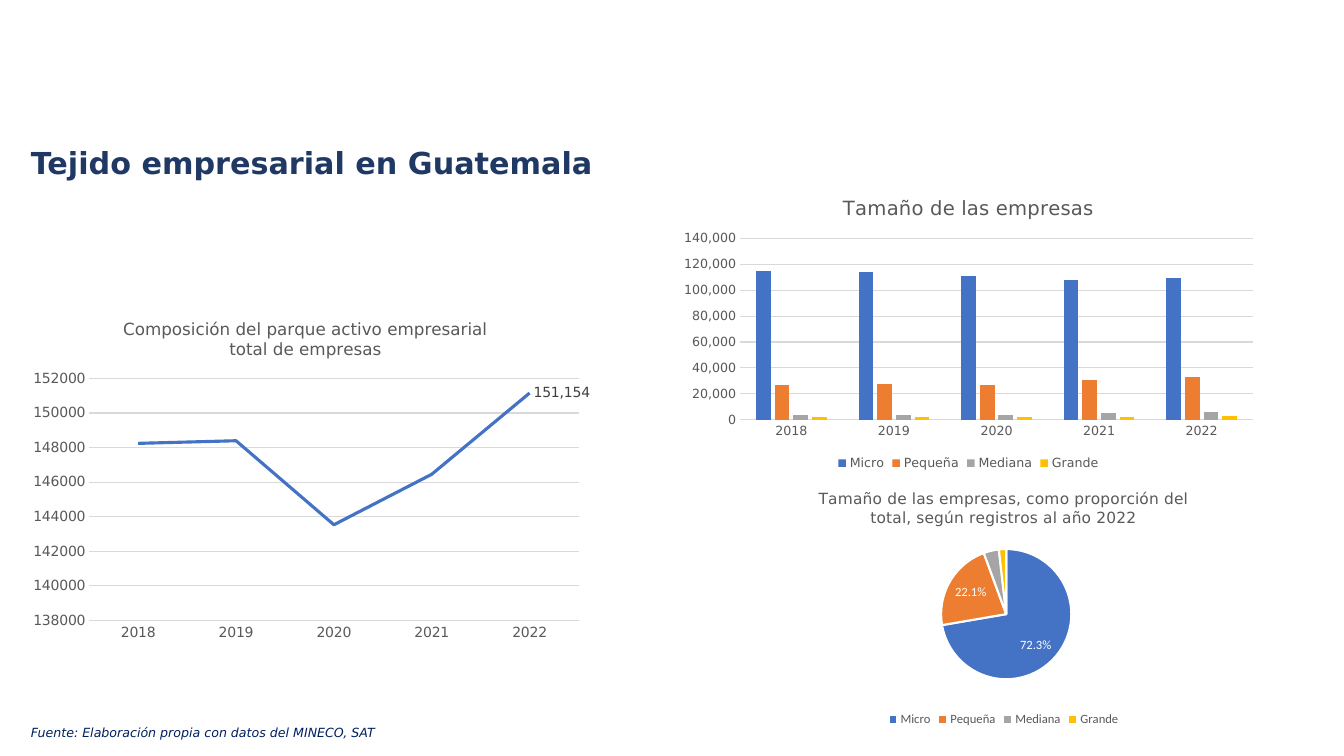
import pptx
import pptx.chart.data
import pptx.dml.color
import pptx.enum.chart
import pptx.enum.text
import pptx.oxml
import pptx.oxml.ns
import pptx.util

Pt = pptx.util.Pt
ChartType = pptx.enum.chart.XL_CHART_TYPE
LabelPosition = pptx.enum.chart.XL_LABEL_POSITION

COLORS = {
    "title": "203864",
    "source": "002060",
    "text": "595959",
    "label": "404040",
    "grid": "D9D9D9",
    "white": "FFFFFF",
    "Micro": "4472C4",
    "Pequeña": "ED7D31",
    "Mediana": "A5A5A5",
    "Grande": "FFC000",
}
SANS = "DejaVu Sans"
YEARS = ["2018", "2019", "2020", "2021", "2022"]
TOTALS = [148243, 148395, 143534, 146456, 151154]
COMPANIES = {
    "Micro": [115000, 114000, 111000, 108000, 109000],
    "Pequeña": [27000, 28000, 27000, 31000, 33000],
    "Mediana": [4000, 4000, 4000, 5000, 6000],
    "Grande": [2000, 2000, 2000, 2000, 3000],
}
SHARES = [0.723, 0.221, 0.038, 0.018]


def rgb(name):
    return pptx.dml.color.RGBColor.from_string(COLORS[name])


def style_font(font, size, color, name=SANS, bold=False, italic=False):
    font.size = Pt(size)
    font.name = name
    font.bold = bold
    font.italic = italic
    font.color.rgb = rgb(color)


def style_line(line, color, width):
    line.color.rgb = rgb(color)
    line.width = Pt(width)


def add_text(page, bounds, text, top_margin, line_spacing, **font_style):
    box = page.shapes.add_textbox(*map(Pt, bounds))
    frame = box.text_frame
    frame.word_wrap = True
    frame.vertical_anchor = pptx.enum.text.MSO_ANCHOR.TOP
    frame.margin_top = Pt(top_margin)
    para = frame.paragraphs[0]
    para.line_spacing = line_spacing
    span = para.add_run()
    span.text = text
    style_font(span.font, **font_style)


def add_chart(page, kind, bounds, categories, series, number_format, font_name=SANS):
    data = pptx.chart.data.CategoryChartData(number_format=number_format)
    data.categories = categories
    for name, values in series.items():
        data.add_series(name, values)
    chart = page.shapes.add_chart(kind, *map(Pt, bounds), data).chart
    style_font(chart.font, 10, "text", font_name)
    chart.has_legend = False
    return chart


def set_title(chart, lines, size):
    chart.has_title = True
    chart.chart_title.include_in_layout = False
    frame = chart.chart_title.text_frame
    for index, line in enumerate(lines):
        para = frame.add_paragraph() if index else frame.paragraphs[0]
        span = para.add_run()
        span.text = line
        style_font(span.font, size, "text")


def set_plot_bounds(chart, left, top, width, height):
    """Place the inner plot area, as fractions of the chart."""
    plot_area = chart.plots[0]._element.getparent()
    for old in plot_area.findall(pptx.oxml.ns.qn("c:layout")):
        plot_area.remove(old)
    sizes = {"x": left, "y": top, "w": width, "h": height}
    modes = '<c:xMode val="edge"/><c:yMode val="edge"/>'
    values = "".join(f'<c:{key} val="{value}"/>' for key, value in sizes.items())
    plot_area.insert(0, pptx.oxml.parse_xml(
        f'<c:layout {pptx.oxml.ns.nsdecls("c")}><c:manualLayout>'
        f'<c:layoutTarget val="inner"/>{modes}{values}'
        '</c:manualLayout></c:layout>'))


def style_axes(chart, size, low, high, step, number_format):
    for axis in (chart.category_axis, chart.value_axis):
        axis.major_tick_mark = pptx.enum.chart.XL_TICK_MARK.NONE
        axis.minor_tick_mark = pptx.enum.chart.XL_TICK_MARK.NONE
        style_font(axis.tick_labels.font, size, "text")
    style_line(chart.category_axis.format.line, "grid", 0.75)
    values = chart.value_axis
    values.format.line.fill.background()
    values.has_major_gridlines = True
    style_line(values.major_gridlines.format.line, "grid", 0.75)
    values.minimum_scale, values.maximum_scale, values.major_unit = low, high, step
    values.tick_labels.number_format = number_format
    values.tick_labels.number_format_is_linked = False


def add_legend(chart, font_name=SANS):
    chart.has_legend = True
    chart.legend.position = pptx.enum.chart.XL_LEGEND_POSITION.BOTTOM
    chart.legend.include_in_layout = False
    style_font(chart.legend.font, 9, "text", font_name)


def label_points(series, indexes, position, size, color, font_name=SANS):
    series.data_labels.show_value = False
    for index in indexes:
        label = series.points[index].data_label
        style_font(label.font, size, color, font_name)
        label.position = position


def add_total_chart(page):
    chart = add_chart(page, ChartType.LINE, (15, 216, 407, 247), YEARS,
                      {"Total": TOTALS}, "#,##0")
    set_title(chart, ["Composición del parque activo empresarial",
                      "total de empresas"], 12)
    set_plot_bounds(chart, 0.12, 0.22, 0.86, 0.7)
    style_axes(chart, 10, 138000, 152000, 2000, "0")
    chart.plots[0].vary_by_categories = False
    total = chart.plots[0].series[0]
    total.smooth = False
    total.marker.style = pptx.enum.chart.XL_MARKER_STYLE.NONE
    style_line(total.format.line, "Micro", 2.25)
    label_points(total, [len(YEARS) - 1], LabelPosition.RIGHT, 10, "label")


def add_size_chart(page):
    chart = add_chart(page, ChartType.COLUMN_CLUSTERED, (480, 128, 423.5, 211),
                      YEARS, COMPANIES, "#,##0")
    set_title(chart, ["Tamaño de las empresas"], 14)
    set_plot_bounds(chart, 0.115, 0.2, 0.865, 0.615)
    style_axes(chart, 9, 0, 140000, 20000, "#,##0")
    add_legend(chart)
    plot = chart.plots[0]
    plot.vary_by_categories = False
    plot.gap_width = 219
    plot.overlap = -27
    for series in plot.series:
        series.format.fill.solid()
        series.format.fill.fore_color.rgb = rgb(series.name)


def add_share_chart(page):
    chart = add_chart(page, ChartType.PIE, (538, 339, 358, 183), list(COMPANIES),
                      {"Proporción": SHARES}, "0.0%", "Calibri")
    set_title(chart, ["Tamaño de las empresas, como proporción del total, "
                      "según registros al año 2022"], 11)
    set_plot_bounds(chart, 0.375, 0.29, 0.26, 0.51)
    add_legend(chart, "Calibri")
    shares = chart.plots[0].series[0]
    for index, name in enumerate(COMPANIES):
        slice_format = shares.points[index].format
        slice_format.fill.solid()
        slice_format.fill.fore_color.rgb = rgb(name)
        style_line(slice_format.line, "white", 1.5)
    label_points(shares, [0, 1], LabelPosition.INSIDE_END, 9, "white", "Calibri")


def main():
    deck = pptx.Presentation()
    deck.slide_width, deck.slide_height = Pt(960), Pt(540)
    page = deck.slides.add_slide(deck.slide_layouts[6])
    add_text(page, (15, 104.5, 465, 48), "Tejido empresarial en Guatemala",
             1.5, 0.9, size=21.6, color="title", bold=True)
    add_total_chart(page)
    add_size_chart(page)
    add_share_chart(page)
    add_text(page, (15, 513.5, 453.5, 18),
             "Fuente: Elaboración propia con datos del MINECO, SAT",
             3.6, 1.07, size=9, color="source", italic=True)
    deck.save("out.pptx")


if __name__ == "__main__":
    main()
